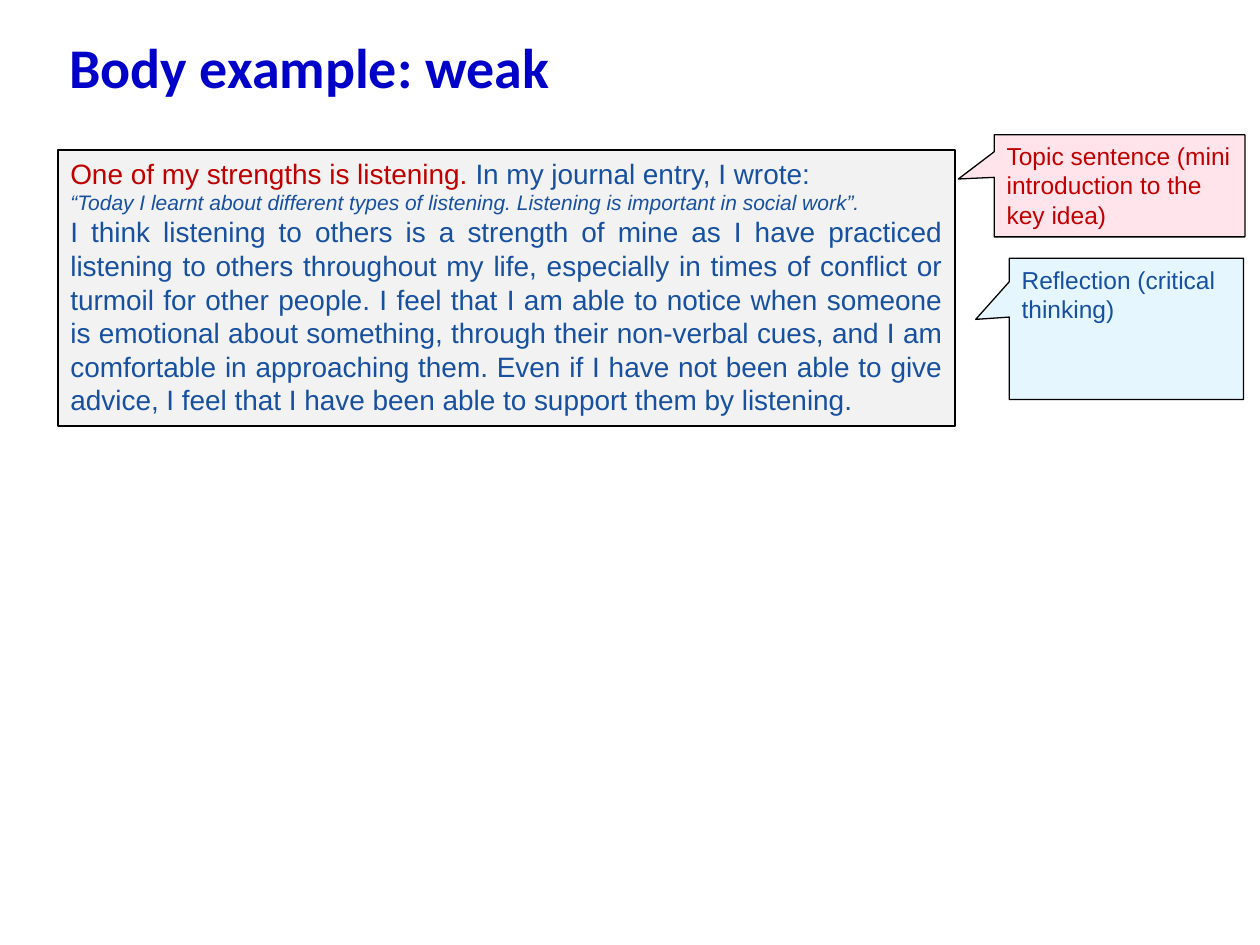
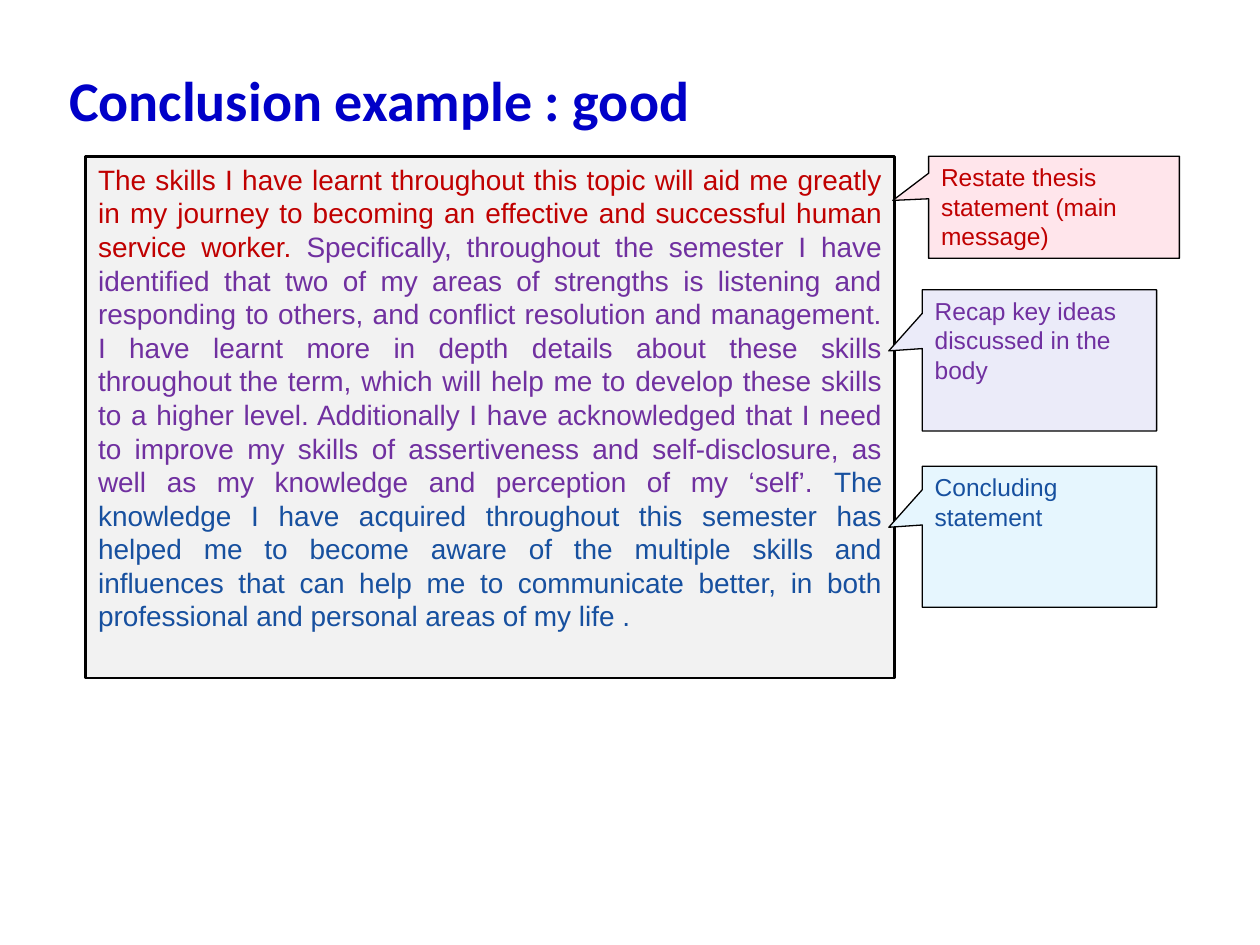
from pptx import Presentation
from pptx.dml.color import RGBColor
from pptx.enum.shapes import MSO_SHAPE
from pptx.enum.text import MSO_ANCHOR, PP_ALIGN
from pptx.util import Inches, Pt

RECTANGLE = MSO_SHAPE.RECTANGLE
CALLOUT = MSO_SHAPE.RECTANGULAR_CALLOUT
LEFT, JUSTIFY = PP_ALIGN.LEFT, PP_ALIGN.JUSTIFY
TOP = MSO_ANCHOR.TOP
HARD_SPACE = chr(160)  # keeps two words on one line

COLORS = {
    "title": "0000C8", "outline": "000000", "panel": "F2F2F2",
    "red": "C00000", "purple": "7030A0", "blue": "17509F",
    "red_tint": "FFE5EB", "purple_tint": "EBEBF9", "blue_tint": "E6F6FE",
}
CALLOUT_SIZES = {"red": (1.99, 0.81), "purple": (1.86, 1.12), "blue": (1.86, 1.12)}
CALLOUT_TIP = (-0.643, -0.067)

# Essay paragraphs are (size, italic, [(color, text), ...]).
# Callouts are (color, left, top, text).
SLIDES = [
    {
        "title": "Body example: weak",
        "title_top": 0.21,
        "essay_box": (0.46, 1.19, 7.12, 2.19),
        "essay": [
            (16, False, [
                ("red", "One of my strengths is listening. "),
                ("blue", "In my journal entry, I wrote:"),
            ]),
            (12, True, [
                ("blue", "“Today I learnt about different types of listening. "
                         "Listening is important in social work”."),
            ]),
            (16, False, [
                ("blue", "I think listening to others is a strength of mine as I have "
                         "practiced listening to others throughout my life, especially in "
                         "times of conflict or turmoil for other people. I feel that I am "
                         "able to notice when someone is emotional about something, through "
                         "their non-verbal cues, and I am comfortable in approaching them. "
                         "Even if I have not been able to give advice, I feel that I have "
                         "been able to support them by listening."),
            ]),
        ],
        "callouts": [
            ("red", 7.89, 1.07, "Topic sentence (mini introduction to the key idea)"),
            ("blue", 8.01, 2.05, "Reflection (critical thinking)"),
        ],
    },
    {
        "title": "Conclusion example : good",
        "title_top": 0.47,
        "essay_box": (0.68, 1.24, 6.42, 4.14),
        "essay": [
            (16, False, [
                ("red", "The skills I have learnt throughout this topic will aid me greatly "
                        "in my journey to becoming an effective and successful human service "
                        "worker. "),
                ("purple", "Specifically, throughout the semester I have identified that two "
                           "of my areas of strengths is listening and responding to others, "
                           "and conflict resolution and management. I have learnt more in "
                           f"depth details about these skills throughout{HARD_SPACE}the term, "
                           "which will help me to develop these skills to a higher level. "
                           "Additionally I have acknowledged that I need to improve my skills "
                           "of assertiveness and self-disclosure, as well as my knowledge and "
                           "perception of my ‘self’. "),
                ("blue", "The knowledge I have acquired throughout this semester has helped "
                         "me to become aware of the multiple skills and influences that can "
                         "help me to communicate better, in both professional and personal "
                         f"areas of my life{HARD_SPACE}."),
            ]),
        ],
        "callouts": [
            ("red", 7.37, 1.24, "Restate thesis statement (main message)"),
            ("purple", 7.32, 2.3, "Recap key ideas discussed in the body"),
            ("blue", 7.32, 3.7, "Concluding statement"),
        ],
    },
]


def rgb(name):
    return RGBColor.from_string(COLORS[name])


def write_paragraph(paragraph, runs, size, font="Arial", bold=False, italic=False,
                    alignment=LEFT):
    paragraph.alignment = alignment
    paragraph.font.name = font
    paragraph.font.size = Pt(size)
    paragraph.font.bold = bold
    paragraph.font.italic = italic
    for color, text in runs:
        run = paragraph.add_run()
        run.text = text
        run.font.color.rgb = rgb(color)


def add_title(slide, text, top):
    box = slide.shapes.add_textbox(Inches(0.45), Inches(top), Inches(9.03), Inches(0.71))
    frame = box.text_frame
    frame.word_wrap = True
    frame.vertical_anchor = TOP
    write_paragraph(frame.paragraphs[0], [("title", text)], 32, "Calibri", bold=True)


def add_box(slide, kind, bounds, fill, line_width):
    shape = slide.shapes.add_shape(kind, *map(Inches, bounds))
    shape.shadow.inherit = False
    shape.fill.solid()
    shape.fill.fore_color.rgb = rgb(fill)
    shape.line.color.rgb = rgb("outline")
    shape.line.width = Pt(line_width)
    shape.text_frame.word_wrap = True
    shape.text_frame.vertical_anchor = TOP
    return shape


def add_essay(slide, bounds, paragraphs):
    frame = add_box(slide, RECTANGLE, bounds, "panel", 1.5).text_frame
    for index, (size, italic, runs) in enumerate(paragraphs):
        paragraph = frame.add_paragraph() if index else frame.paragraphs[0]
        write_paragraph(paragraph, runs, size, italic=italic, alignment=JUSTIFY)


def add_callout(slide, color, left, top, text):
    bounds = (left, top, *CALLOUT_SIZES[color])
    shape = add_box(slide, CALLOUT, bounds, f"{color}_tint", 0.75)
    for index, value in enumerate(CALLOUT_TIP):
        shape.adjustments[index] = value
    write_paragraph(shape.text_frame.paragraphs[0], [(color, text)], 14)


def main():
    presentation = Presentation()
    presentation.slide_width = Inches(10)
    presentation.slide_height = Inches(7.5)
    blank = presentation.slide_layouts[6]
    for content in SLIDES:
        slide = presentation.slides.add_slide(blank)
        add_title(slide, content["title"], content["title_top"])
        add_essay(slide, content["essay_box"], content["essay"])
        for callout in content["callouts"]:
            add_callout(slide, *callout)
    presentation.save("out.pptx")


if __name__ == "__main__":
    main()
